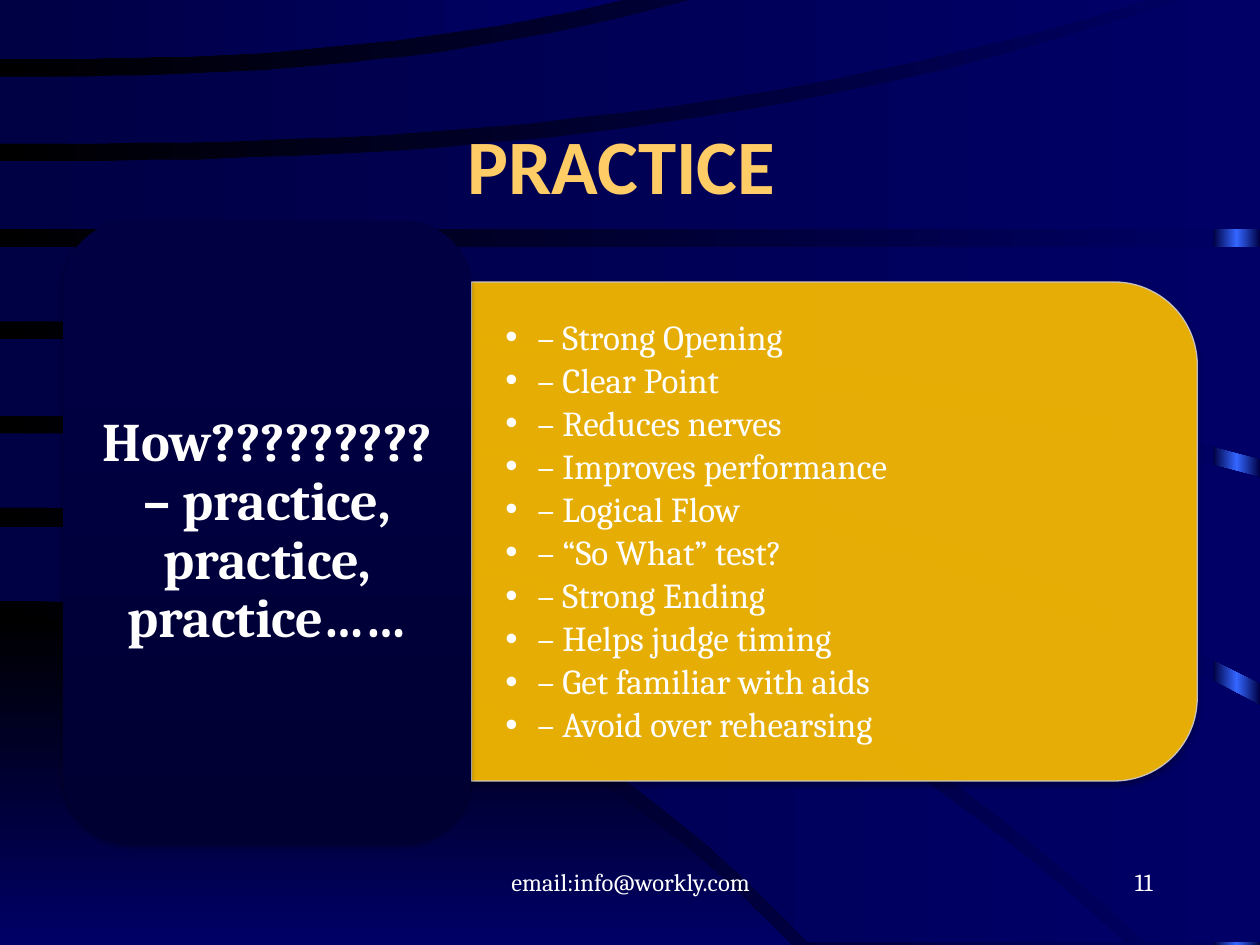
from copy import deepcopy

from lxml import etree
from pptx import Presentation
from pptx.dml.color import RGBColor
from pptx.enum.shapes import MSO_SHAPE
from pptx.enum.text import MSO_ANCHOR, MSO_AUTO_SIZE, PP_ALIGN
from pptx.oxml.ns import qn
from pptx.util import Cm, Pt

RECTANGLE = MSO_SHAPE.RECTANGLE
ROUNDED = MSO_SHAPE.ROUNDED_RECTANGLE
ROUNDED_TOP = MSO_SHAPE.ROUND_2_SAME_RECTANGLE
LEFT, CENTER, RIGHT = PP_ALIGN.LEFT, PP_ALIGN.CENTER, PP_ALIGN.RIGHT
TOP, MIDDLE = MSO_ANCHOR.TOP, MSO_ANCHOR.MIDDLE
NO_AUTOFIT = MSO_AUTO_SIZE.NONE

BAND_UNIT = Cm(0.0254)
CURVE_STEPS = 24
CURVE_POWER = 2.5
BAND_STOPS = [(0, "000044"), (1, "000066")]
GLOW_STOPS = [(0, "000044"), (0.5, "3366FF"), (1, "000044")]
NIGHT_STOPS = [(0, "000000"), (1, "000066")]
CARD_STOPS = [(0, "000033"), (0.8, "000042")]

CORNER = [(491, 628, 750), (750, 628, 750)]
BANDS = [
    [(418, 893, 748), (477, 642, 748)],
    [(344, 1000, 560), (403, 909, 748)],
    [(269, 1000, 379), (330, 1000, 542)],
    [(196, 1000, 196), (255, 1000, 364)],
    [(128, 943, -2), (182, 1000, 182)],
    [(61, 556, -2), (114, 917, -2)],
    [(-2, 501, -2), (47, 501, -2)],
]

TITLE_FONT = {"name": "Calibri", "size": Pt(44), "bold": True}
CARD_FONT = {"name": "Cambria", "size": Pt(31), "bold": True}
LIST_FONT = {"name": "Cambria", "size": Pt(20), "bold": False}
FOOTER_FONT = {"name": "Cambria", "size": Pt(14), "bold": False}
TIGHT = {"line_spacing": 0.9, "space_before": Pt(0)}

ADVICE = [
    "– Strong Opening", "– Clear Point", "– Reduces nerves", "– Improves performance",
    "– Logical Flow", "– “So What” test?", "– Strong Ending", "– Helps judge timing",
    "– Get familiar with aids", "– Avoid over rehearsing",
]


def rgb(value):
    """Turn a hex string into a colour."""
    return RGBColor.from_string(value)


def set_values(target, values):
    """Set each named attribute of the target."""
    for name, value in values.items():
        setattr(target, name, value)


def paint_gradient(fill, element, stops, angle=0):
    """Give a fill a linear gradient, with the angle counted anticlockwise."""
    fill.gradient()
    fill.gradient_angle = angle
    stop_list = next(element.iter(qn("a:gsLst")))
    for _ in stops[2:]:
        stop_list.append(deepcopy(stop_list[-1]))
    for stop, (position, color) in zip(fill.gradient_stops, stops):
        stop.position = position
        stop.color.rgb = rgb(color)


def finish_gradient(shape, stops, angle=0):
    """Paint a borderless shape with a gradient."""
    shape.shadow.inherit = False
    shape.line.fill.background()
    paint_gradient(shape.fill, shape._element, stops, angle)


def trace_edge(start, reach, end):
    """List the points of a curve that leaves the left side level and then bends."""
    shares = [step / CURVE_STEPS for step in range(CURVE_STEPS + 1)]
    return [(reach * share, start + (end - start) * share ** CURVE_POWER) for share in shares]


def add_band(slide, edges, stops, angle=0):
    """Draw one background band between its upper and lower edge."""
    upper, lower = (trace_edge(*edge) for edge in edges)
    nearest, farthest = sorted([upper[-1], lower[-1]])
    corner = (farthest[0], nearest[1])
    builder = slide.shapes.build_freeform(*upper[0], scale=BAND_UNIT)
    builder.add_line_segments([*upper[1:], corner, *reversed(lower)], close=True)
    finish_gradient(builder.convert_to_shape(), stops, angle)


def add_backdrop(slide):
    """Draw the night sky, the glowing edge and the bands."""
    paint_gradient(slide.background.fill, slide._element, NIGHT_STOPS)
    edge = slide.shapes.add_shape(RECTANGLE, Cm(24.46), 0, Cm(0.94), Cm(19.05))
    finish_gradient(edge, GLOW_STOPS)
    add_band(slide, CORNER, NIGHT_STOPS, 270)
    for edges in BANDS:
        add_band(slide, edges, BAND_STOPS)


def add_soft_shadow(shape):
    """Drop a soft shadow below a shape."""
    shape.shadow.inherit = False
    effects = shape._element.spPr.find(qn("a:effectLst"))
    shadow = etree.SubElement(effects, qn("a:outerShdw"), blurRad=str(Pt(3.1)),
                              dist=str(Pt(1.8)), dir="5400000", rotWithShape="0")
    color = etree.SubElement(shadow, qn("a:srgbClr"), val="000000")
    etree.SubElement(color, qn("a:alpha"), val="35000")


def add_panel(slide):
    """Draw the gold panel behind the list."""
    panel = slide.shapes.add_shape(ROUNDED_TOP, Cm(11.79), Cm(3.4), Cm(10.06), Cm(14.63))
    panel.rotation = 90
    panel.fill.solid()
    panel.fill.fore_color.rgb = rgb("FFC000")
    panel.line.color.rgb = rgb("CCCCCF")
    panel.line.width = Pt(0.75)
    for color in panel._element.spPr.iter(qn("a:srgbClr")):
        etree.SubElement(color, qn("a:alpha"), val="90000")
    add_soft_shadow(panel)


def write_text(shape, lines, font, color, alignment, anchor, spacing=None, insets=(0.25, 0.13)):
    """Fill a shape with formatted paragraphs."""
    across, down = (Cm(inset) for inset in insets)
    frame = shape.text_frame
    set_values(frame, {"word_wrap": True, "auto_size": NO_AUTOFIT, "vertical_anchor": anchor,
                       "margin_left": across, "margin_right": across,
                       "margin_top": down, "margin_bottom": down})
    frame.text = "\n".join(lines)
    for paragraph in frame.paragraphs:
        set_values(paragraph, {"alignment": alignment, **(spacing or {})})
        for run in paragraph.runs:
            set_values(run.font, font)
            run.font.color.rgb = rgb(color)


def place(slide, shape, left, top, width, height):
    """Move a placeholder to its position and to the front."""
    set_values(shape, {"left": Cm(left), "top": Cm(top),
                       "width": Cm(width), "height": Cm(height)})
    slide.shapes._spTree.append(shape._element)


def add_list(slide, body):
    """Set the bulleted advice in the body placeholder."""
    place(slide, body, 9.5, 6.2, 14.15, 9.07)
    write_text(body, ADVICE, LIST_FONT, "FFFFFF", LEFT, MIDDLE,
               {**TIGHT, "space_after": Pt(3)}, (0.69, 0.36))
    for paragraph in body.text_frame.paragraphs:
        properties = paragraph._p.get_or_add_pPr()
        properties.set("marL", str(Cm(0.64)))
        properties.set("indent", str(-Cm(0.64)))
        etree.SubElement(properties, qn("a:buChar"), char="•")


def add_card(slide):
    """Draw the dark card with the question."""
    card = slide.shapes.add_shape(ROUNDED, Cm(1.27), Cm(4.45), Cm(8.23), Cm(12.55))
    finish_gradient(card, CARD_STOPS, 90)
    add_soft_shadow(card)
    label = slide.shapes.add_textbox(Cm(1.68), Cm(4.85), Cm(7.42), Cm(11.76))
    write_text(label, ["How????????? – practice, practice, practice……"], CARD_FONT,
               "FFFFFF", CENTER, MIDDLE, TIGHT, (0.33, 0.15))


def add_footer(slide, text, left, width, alignment):
    """Write one footer text."""
    footer = slide.shapes.add_textbox(Cm(left), Cm(17.35), Cm(width), Cm(1.27))
    write_text(footer, [text], FOOTER_FONT, "FFFFFF", alignment, TOP)


def main():
    """Build and save the slide."""
    presentation = Presentation()
    presentation.slide_width, presentation.slide_height = Cm(25.4), Cm(19.05)
    slide = presentation.slides.add_slide(presentation.slide_layouts[1])
    title, body = slide.placeholders
    add_backdrop(slide)
    place(slide, title, 1.9, 1.7, 21.6, 3.18)
    write_text(title, ["PRACTICE "], TITLE_FONT, "FFCC66", CENTER, MIDDLE)
    add_panel(slide)
    add_list(slide, body)
    add_card(slide)
    add_footer(slide, "email:info@workly.com", 8.69, 8.05, CENTER)
    add_footer(slide, "11", 18.21, 5.28, RIGHT)
    presentation.save("out.pptx")


if __name__ == "__main__":
    main()
